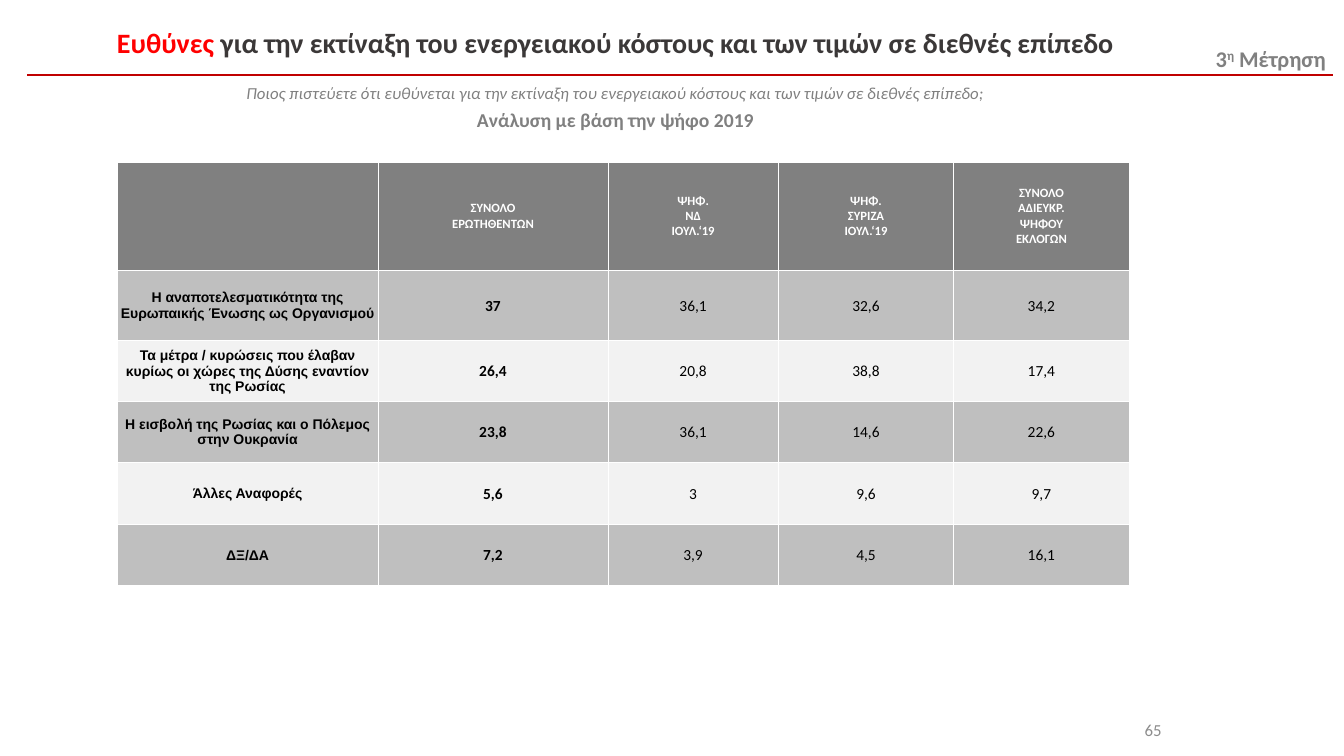
import pptx
import pptx.dml.color
import pptx.enum.shapes
import pptx.enum.text
import pptx.oxml.ns
import pptx.util
from lxml import etree

Inches, Pt = pptx.util.Inches, pptx.util.Pt
RGBColor = pptx.dml.color.RGBColor
MIDDLE = pptx.enum.text.MSO_ANCHOR.MIDDLE
CENTER = pptx.enum.text.PP_ALIGN.CENTER
RIGHT = pptx.enum.text.PP_ALIGN.RIGHT
qn = pptx.oxml.ns.qn

WHITE = RGBColor(0xFF, 0xFF, 0xFF)
BLACK = RGBColor(0, 0, 0)
RED = RGBColor(0xFF, 0, 0)
RULE_RED = RGBColor(0xC0, 0, 0)
CHARCOAL = RGBColor(0x3B, 0x38, 0x38)
GRAY = RGBColor(0x80, 0x80, 0x80)
PAGE_GRAY = RGBColor(0x8C, 0x8C, 0x8C)
BAND_DARK = RGBColor(0xBF, 0xBF, 0xBF)
BAND_LIGHT = RGBColor(0xF2, 0xF2, 0xF2)

COLUMN_WIDTHS = [2.59, 2.28, 1.69, 1.74, 1.74]
ROW_HEIGHTS = [1.07, 0.7, 0.6, 0.61, 0.61, 0.61]
HEADERS = [
    "",
    "ΣΥΝΟΛΟ\nΕΡΩΤΗΘΕΝΤΩΝ",
    "ΨΗΦ.\nΝΔ\nΙΟΥΛ.‘19",
    "ΨΗΦ.\nΣΥΡΙΖΑ\nΙΟΥΛ.‘19",
    "ΣΥΝΟΛΟ\nΑΔΙΕΥΚΡ.\nΨΗΦΟΥ\nΕΚΛΟΓΩΝ",
]
ANSWERS = [
    ["Η αναποτελεσματικότητα της Ευρωπαικής Ένωσης ως Οργανισμού", "37", "36,1", "32,6", "34,2"],
    ["Τα μέτρα / κυρώσεις που έλαβαν κυρίως οι χώρες της Δύσης εναντίον της Ρωσίας",
     "26,4", "20,8", "38,8", "17,4"],
    ["Η εισβολή της Ρωσίας και ο Πόλεμος στην Ουκρανία", "23,8", "36,1", "14,6", "22,6"],
    ["Άλλες Αναφορές", "5,6", "3", "9,6", "9,7"],
    ["ΔΞ/ΔΑ", "7,2", "3,9", "4,5", "16,1"],
]


def style(font, size, color, bold=False, italic=False, name="Calibri"):
    """Format one font."""
    font.name, font.size, font.bold, font.italic = name, Pt(size), bold, italic
    font.color.rgb = color


def add_run(paragraph, text, *look, **flags):
    """Append a formatted run and return it."""
    run = paragraph.add_run()
    run.text = text
    style(run.font, *look, **flags)
    return run


def add_rule(slide, left, top, width):
    """Draw the red rule under the title."""
    rule = slide.shapes.add_connector(
        pptx.enum.shapes.MSO_CONNECTOR.STRAIGHT,
        Inches(left), Inches(top), Inches(left + width), Inches(top))
    rule.line.color.rgb = RULE_RED
    rule.line.width = Pt(1.5)
    etree.SubElement(rule._element.spPr, qn("a:effectLst"))


def add_wave_label(slide, left, top, width, height):
    """Write the survey wave at the right edge."""
    label = slide.shapes.add_textbox(*map(Inches, (left, top, width, height)))
    label.text_frame.word_wrap = False
    wave = label.text_frame.paragraphs[0]
    add_run(wave, "3", 16, GRAY, bold=True)
    ordinal = add_run(wave, "η", 16, GRAY, bold=True)
    ordinal._r.get_or_add_rPr().set("baseline", "30000")
    add_run(wave, " Μέτρηση", 16, GRAY, bold=True)


def add_heading(slide, left, top, width, height):
    """Write the title, the survey question and the breakdown."""
    frame = slide.shapes.add_textbox(*map(Inches, (left, top, width, height))).text_frame
    frame.word_wrap = True
    title, question, breakdown = frame.paragraphs[0], frame.add_paragraph(), frame.add_paragraph()
    for paragraph, spacing in ((title, 1.1), (question, 1.1), (breakdown, 1.2)):
        paragraph.alignment = CENTER
        paragraph.line_spacing = spacing
    question.space_before = Pt(15.4)
    add_run(title, "Ευθύνες", 20, RED, bold=True)
    add_run(title, " για την εκτίναξη του ενεργειακού κόστους και των τιμών σε διεθνές επίπεδο",
            20, CHARCOAL, bold=True)
    add_run(question, "Ποιος πιστεύετε ότι ευθύνεται για την εκτίναξη του ενεργειακού κόστους "
            "και των τιμών σε διεθνές επίπεδο;", 12, GRAY, italic=True)
    add_run(breakdown, "Ανάλυση με βάση την ψήφο 2019", 14, GRAY, bold=True)


def add_page_number(slide, left, top, width, height):
    """Place the page number on its white block."""
    page = slide.shapes.add_shape(pptx.enum.shapes.MSO_SHAPE.RECTANGLE,
                                  *map(Inches, (left, top, width, height)))
    page.shadow.inherit = False
    page.fill.solid()
    page.fill.fore_color.rgb = WHITE
    page.line.fill.background()
    page.text_frame.vertical_anchor = MIDDLE
    number = page.text_frame.paragraphs[0]
    number.alignment = RIGHT
    add_run(number, "65", 12, PAGE_GRAY)


def fill_cell(cell, text, fill, *look, **flags):
    """Give a cell its white borders, fill and centred text."""
    properties = cell._tc.get_or_add_tcPr()
    for side in ("lnL", "lnR", "lnT", "lnB"):
        border = etree.SubElement(properties, qn(f"a:{side}"), w=str(Pt(0.5)))
        solid = etree.SubElement(border, qn("a:solidFill"))
        etree.SubElement(solid, qn("a:srgbClr"), val=str(WHITE))
    cell.fill.solid()
    cell.fill.fore_color.rgb = fill
    cell.vertical_anchor = MIDDLE
    cell.text_frame.text = text
    for paragraph in cell.text_frame.paragraphs:
        paragraph.alignment = CENTER
        for run in paragraph.runs:
            style(run.font, *look, **flags)


def add_answers(slide, left, top):
    """Build the table of answers by vote in 2019."""
    table = slide.shapes.add_table(
        len(ROW_HEIGHTS), len(COLUMN_WIDTHS), Inches(left), Inches(top),
        Inches(sum(COLUMN_WIDTHS)), Inches(sum(ROW_HEIGHTS))).table
    for column, width in zip(table.columns, COLUMN_WIDTHS):
        column.width = Inches(width)
    for row, height in zip(table.rows, ROW_HEIGHTS):
        row.height = Inches(height)
    for c, header in enumerate(HEADERS):
        fill_cell(table.cell(0, c), header, GRAY, 9, WHITE, bold=True)
    for r, answer in enumerate(ANSWERS, 1):
        band = BAND_DARK if r % 2 else BAND_LIGHT
        for c, text in enumerate(answer):
            cell = table.cell(r, c)
            cell.margin_left = cell.margin_right = cell.margin_top = Inches(0.01)
            cell.margin_bottom = 0
            size, name = (11, "Calibri") if c else (10, "Arial")
            fill_cell(cell, text, band, size, BLACK, bold=c < 2, name=name)


def main():
    """Build and save the slide."""
    deck = pptx.Presentation()
    deck.slide_width, deck.slide_height = Inches(13.33), Inches(7.5)
    slide = deck.slides.add_slide(deck.slide_layouts[6])
    add_rule(slide, 0.27, 0.74, 12.95)
    add_wave_label(slide, 11.96, 0.4, 1.37, 0.37)
    add_heading(slide, 0.32, 0.17, 11.57, 1.19)
    add_page_number(slide, 10.98, 7.04, 0.64, 0.4)
    add_answers(slide, 1.16, 1.61)
    deck.save("out.pptx")


if __name__ == "__main__":
    main()
